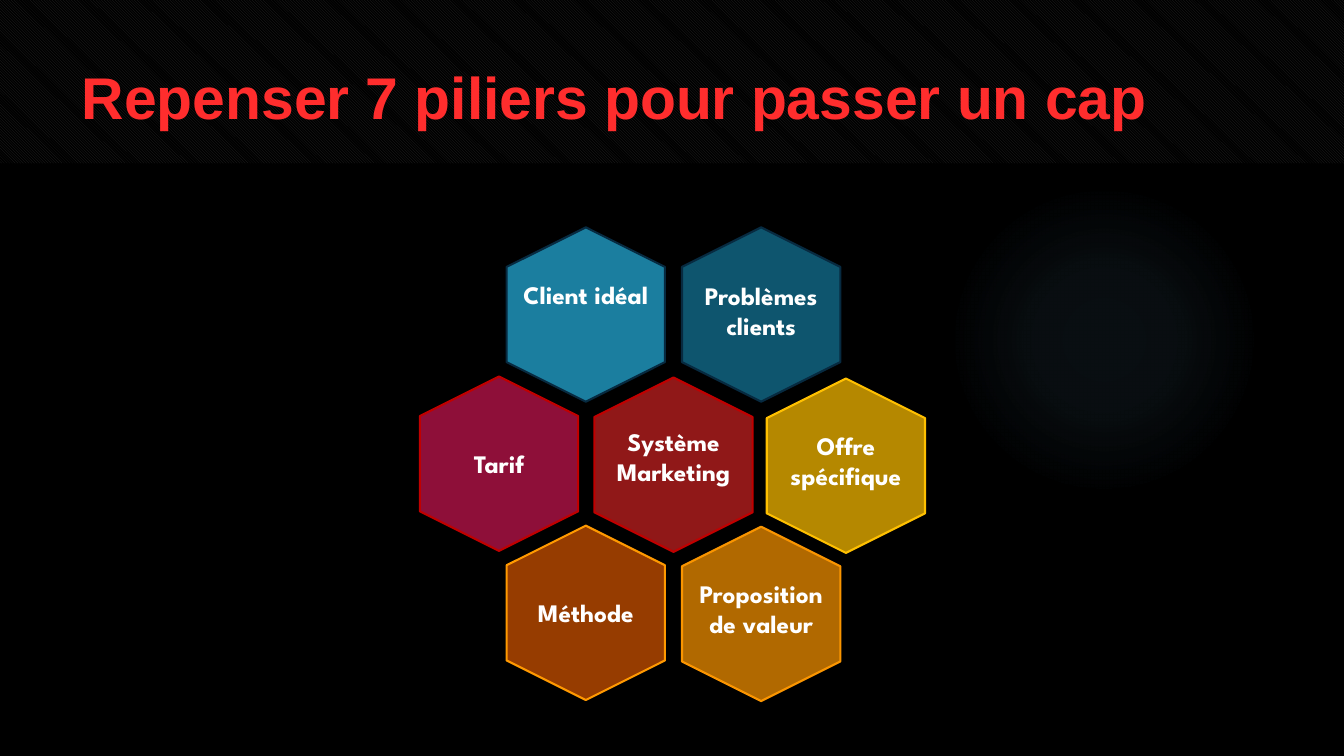
from lxml import etree
from pptx import Presentation
from pptx.dml.color import RGBColor
from pptx.enum.dml import MSO_PATTERN
from pptx.enum.shapes import MSO_SHAPE
from pptx.enum.text import MSO_ANCHOR, PP_ALIGN
from pptx.oxml import parse_xml
from pptx.oxml.ns import nsdecls, qn
from pptx.util import Inches, Pt

HEXAGON, OVAL, RECTANGLE = MSO_SHAPE.HEXAGON, MSO_SHAPE.OVAL, MSO_SHAPE.RECTANGLE
DIAGONAL = MSO_PATTERN.DARK_DOWNWARD_DIAGONAL
TOP, LEFT, CENTER = MSO_ANCHOR.TOP, PP_ALIGN.LEFT, PP_ALIGN.CENTER

COLORS = {
    "black": "000000", "stripe": "262626", "glow": "7AC4F0",
    "title": "FF2D2D", "white": "FFFFFF",
    "sky": "27B2E1", "teal": "15799B", "navy": "072A40",
    "red": "F62A2A", "pink": "F21A62", "crimson": "C00000",
    "orange": "FF6600", "amber": "FF9900", "gold": "FA9500", "yellow": "FFC000",
}

HEX_LENGTH, HEX_WIDTH = 1.73, 1.57
LABEL_WIDTH = 1.57

# Label, centre x and y within the cluster, label rise above the centre,
# label height, fill, fill opacity in percent, outline
PILLARS = [
    ("Client idéal", 1.73, 0.78, 0.4, 0.71, "sky", 71, "navy"),
    ("Système\nMarketing", 2.6, 2.27, 0.43, 1.15, "red", 59, "crimson"),
    ("Tarif", 0.87, 2.26, 0.2, 0.4, "pink", 59, "crimson"),
    ("Méthode", 1.73, 3.74, 0.2, 0.4, "orange", 59, "amber"),
    ("Proposition de valeur", 3.47, 3.75, 0.4, 0.71, "gold", 71, "gold"),
    ("Problèmes clients", 3.47, 0.78, 0.39, 0.71, "teal", 71, "navy"),
    ("Offre spécifique", 4.31, 2.28, 0.4, 0.71, "yellow", 71, "yellow"),
]


def color(name):
    return RGBColor.from_string(COLORS[name])


def format_runs(frame, font_name, size, color_name, align):
    for paragraph in frame.paragraphs:
        paragraph.alignment = align
        for run in paragraph.runs:
            run.font.name = font_name
            run.font.size = Pt(size)
            run.font.bold = True
            run.font.color.rgb = color(color_name)


def add_glow(slide, left, top, size):
    glow = slide.shapes.add_shape(
        OVAL, Inches(left), Inches(top), Inches(size), Inches(size))
    glow.shadow.inherit = False
    glow.line.fill.background()
    # Radial gradient that fades to transparent
    stops = "".join(
        f'<a:gs pos="{pos * 1000}"><a:srgbClr val="{COLORS["glow"]}">'
        f'<a:alpha val="{alpha * 1000}"/></a:srgbClr></a:gs>'
        for pos, alpha in ((0, 7), (36, 6), (69, 0)))
    gradient = parse_xml(
        f'<a:gradFill {nsdecls("a")} rotWithShape="1"><a:gsLst>{stops}</a:gsLst>'
        '<a:path path="circle"><a:fillToRect l="50000" t="50000" '
        'r="50000" b="50000"/></a:path></a:gradFill>')
    glow._element.spPr.find(qn("a:prstGeom")).addnext(gradient)


def add_header(slide, width, height):
    # Striped band
    band = slide.shapes.add_shape(
        RECTANGLE, 0, 0, Inches(width), Inches(height))
    band.shadow.inherit = False
    band.line.fill.background()
    band.fill.patterned()
    band.fill.pattern = DIAGONAL
    band.fill.fore_color.rgb = color("stripe")
    band.fill.back_color.rgb = color("black")

    # Title, brought in front of the band
    title = slide.shapes.title
    band._element.addnext(title._element)
    title.left, title.top = Inches(0.71), Inches(0.5)
    title.width, title.height = Inches(width - 1.42), Inches(1.53)
    frame = title.text_frame
    frame.text = "Repenser 7 piliers pour passer un cap"
    frame.vertical_anchor = TOP
    frame.margin_top = Inches(0.1)
    frame.paragraphs[0].line_spacing = 1.0
    format_runs(frame, "Arial", 42, "title", LEFT)


def add_pillar(slide, x, y, text, rise, label_height, fill, opacity, outline):
    # Upright hexagon centred on x, y
    cell = slide.shapes.add_shape(
        HEXAGON, Inches(x - HEX_LENGTH / 2), Inches(y - HEX_WIDTH / 2),
        Inches(HEX_LENGTH), Inches(HEX_WIDTH))
    cell.rotation = 270
    cell.shadow.inherit = False
    cell.fill.solid()
    cell.fill.fore_color.rgb = color(fill)
    tint = cell._element.spPr.find(qn("a:solidFill")).find(qn("a:srgbClr"))
    etree.SubElement(tint, qn("a:alpha")).set("val", str(opacity * 1000))
    cell.line.color.rgb = color(outline)
    cell.line.width = Pt(1.5)

    # Horizontal label
    label = slide.shapes.add_textbox(
        Inches(x - LABEL_WIDTH / 2), Inches(y - rise),
        Inches(LABEL_WIDTH), Inches(label_height))
    frame = label.text_frame
    frame.word_wrap = True
    frame.text = text
    format_runs(frame, "League Spartan", 18, "white", CENTER)


def add_cluster(slide, left, top):
    for text, x, y, *style in PILLARS:
        add_pillar(slide, left + x, top + y, text, *style)


def main():
    prs = Presentation()
    prs.slide_width, prs.slide_height = Inches(13.33), Inches(7.5)
    slide = prs.slides.add_slide(prs.slide_layouts[5])
    slide.background.fill.solid()
    slide.background.fill.fore_color.rgb = color("black")
    add_glow(slide, 9.41, 1.83, 3.08)
    add_header(slide, 13.33, 1.62)
    add_cluster(slide, 4.08, 2.34)
    prs.save("out.pptx")


if __name__ == "__main__":
    main()
